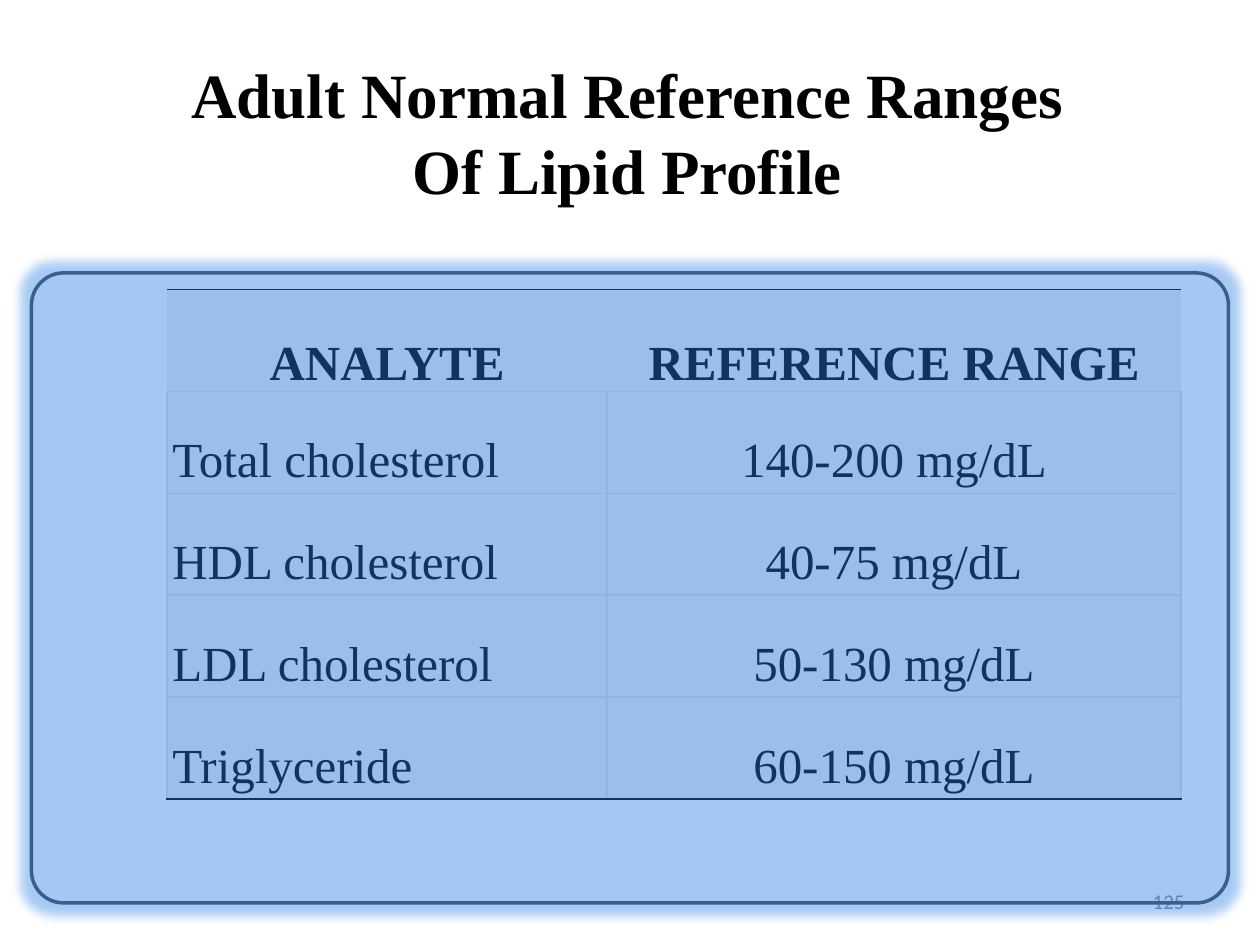
from pptx import Presentation
from pptx.dml.color import RGBColor as RGB
from pptx.enum.shapes import MSO_SHAPE as Shape
from pptx.enum.text import MSO_ANCHOR as Anchor, PP_ALIGN as Align
from pptx.oxml.ns import qn
from pptx.util import Pt
from lxml.etree import SubElement as Sub

HUES = {"ink": "000000", "gray": "8C8C8C", "cell": "F1F1F1", "grid": "E0E0E0",
        "blue": "4F81BD", "edge": "3A5F8C", "glow": "237BE6"}
SERIF, SANS = "Times New Roman", "Calibri"
ROWS = [("ANALYTE", "REFERENCE RANGE"),
        ("Total cholesterol", "140-200 mg/dL"),
        ("HDL cholesterol", "40-75 mg/dL"),
        ("LDL cholesterol", "50-130 mg/dL"),
        ("Triglyceride", "60-150 mg/dL")]


class Deck:
    def __init__(self):
        self.prs = Presentation()
        self.prs.slide_width, self.prs.slide_height = Pt(720), Pt(540)
        self.slide = self.prs.slides.add_slide(self.prs.slide_layouts[5])

    def run(self, para, text, size, font=SERIF, hue="ink", bold=False):
        run = para.add_run()
        run.text = text
        run.font.size, run.font.name, run.font.bold = Pt(size), font, bold
        run.font.color.rgb = RGB.from_string(HUES[hue])

    def title(self, lines, box):
        shape = self.slide.shapes.title
        shape.left, shape.top, shape.width, shape.height = map(Pt, box)
        shape.text_frame.vertical_anchor = Anchor.MIDDLE
        para = shape.text_frame.paragraphs[0]
        para.alignment = Align.CENTER
        for i, line in enumerate(lines):
            if i:
                para.add_line_break()
            self.run(para, line, 36, bold=True)

    def number(self, text, box):
        frame = self.slide.shapes.add_textbox(*map(Pt, box)).text_frame
        frame.word_wrap = True
        frame.vertical_anchor = Anchor.MIDDLE
        para = frame.paragraphs[0]
        para.alignment = Align.RIGHT
        self.run(para, text, 12, SANS, "gray")

    def border(self, cell, sides):
        """Draw the four cell borders; a side without a hue stays bare."""
        props = cell._tc.get_or_add_tcPr()
        for side in "LRTB":
            line = Sub(props, qn(f"a:ln{side}"), w=str(Pt(1)))
            if side in sides:
                fill = Sub(line, qn("a:solidFill"))
                Sub(fill, qn("a:srgbClr"), val=HUES[sides[side]])
            else:
                Sub(line, qn("a:noFill"))

    def cell(self, cell, text, head, last, center):
        sides = {"T": "ink" if head else "grid", "B": "ink" if last else "grid"}
        if not head:
            sides.update(L="grid", R="grid")
        self.border(cell, sides)
        cell.fill.solid()
        cell.fill.fore_color.rgb = RGB.from_string(HUES["cell"])
        inset = Pt(0 if head else 3)
        cell.margin_left = cell.margin_right = inset
        cell.margin_top = cell.margin_bottom = inset
        cell.vertical_anchor = Anchor.BOTTOM
        para = cell.text_frame.paragraphs[0]
        para.alignment = Align.CENTER if center else Align.LEFT
        para.line_spacing, para.space_after = 1.15, Pt(10)
        self.run(para, text, 28, bold=head)

    def table(self, rows, left, top, widths, high):
        table = self.slide.shapes.add_table(
            len(rows), len(widths), Pt(left), Pt(top),
            Pt(sum(widths)), Pt(high * len(rows))).table
        for col, width in zip(table.columns, widths):
            col.width = Pt(width)
        for r, row in enumerate(rows):
            table.rows[r].height = Pt(high)
            for c, text in enumerate(row):
                head = r == 0
                self.cell(table.cell(r, c), text, head,
                          r == len(rows) - 1, head or c > 0)

    def panel(self, box):
        """Add a faint rounded frame with a soft glow."""
        shape = self.slide.shapes.add_shape(Shape.ROUNDED_RECTANGLE, *map(Pt, box))
        shape.adjustments[0] = 0.051
        shape.fill.solid()
        shape.fill.fore_color.rgb = RGB.from_string(HUES["blue"])
        tint = shape._element.spPr.find(qn("a:solidFill"))[0]
        Sub(tint, qn("a:alpha"), val="3000")
        shape.line.color.rgb = RGB.from_string(HUES["edge"])
        shape.line.width = Pt(2)
        shape.shadow.inherit = False
        effects = shape._element.spPr.find(qn("a:effectLst"))
        glow = Sub(effects, qn("a:glow"), rad=str(Pt(11)))
        color = Sub(glow, qn("a:srgbClr"), val=HUES["glow"])
        Sub(color, qn("a:alpha"), val="40000")


def main():
    deck = Deck()
    deck.title(["Adult Normal Reference Ranges ", "Of Lipid Profile "],
               (36, 30, 654, 90))
    deck.number("125", (516, 500.5, 168, 28.75))
    deck.table(ROWS, 95.5, 165.5, (251.25, 328.25), 58.2)
    deck.panel((18, 156, 684, 360))
    deck.prs.save("out.pptx")


if __name__ == "__main__":
    main()
